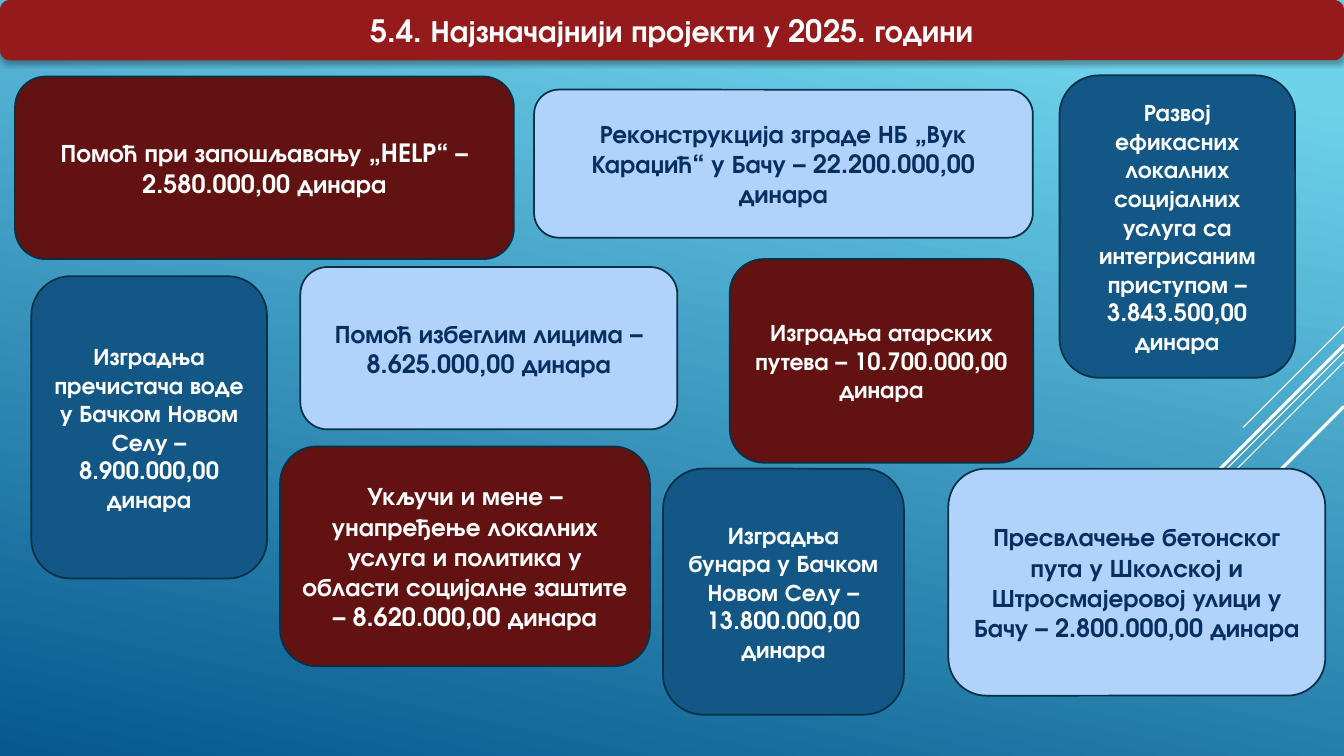
from dataclasses import dataclass

from lxml import etree
from pptx import Presentation
from pptx.dml.color import RGBColor
from pptx.enum.shapes import MSO_CONNECTOR as Connector, MSO_SHAPE as Shape
from pptx.enum.text import MSO_ANCHOR as Anchor, PP_ALIGN as Align
from pptx.oxml import parse_xml
from pptx.oxml.ns import nsdecls, qn
from pptx.util import Cm, Pt

WIDTH, HEIGHT = 33.87, 19.05


@dataclass(frozen=True)
class CardStyle:
    fill: str
    text: str
    size: int


@dataclass(frozen=True)
class Theme:
    font: str = "TeX Gyre Adventor"
    sky: str = "6ED2EB"
    sea: str = "06588E"
    white: str = "FFFFFF"
    banner: str = "941A1B"
    outline: str = "043148"
    title_size: int = 22
    outline_width: float = 1.25
    red: CardStyle = CardStyle("631212", "FFFFFF", 18)
    red_small: CardStyle = CardStyle("631212", "FFFFFF", 17)
    light: CardStyle = CardStyle("B1D3FB", "052F61", 18)
    blue: CardStyle = CardStyle("125785", "FFFFFF", 17)


THEME = Theme()

# Diagonal rays: height at the right edge, horizontal reach, line width
RAYS = [
    (8.23, 2.54, 0.75),
    (8.86, 8.28, 0.75),
    (9.12, 5.26, 0.75),
    (8.69, 4.85, 2.25),
    (10.24, 3.53, 2.25),
]

# Projects: box (left, top, width, height), style, text
PROJECTS = [
    ((0.38, 1.93, 12.57, 4.6), THEME.red,
     "Помоћ при запошљавању „HELP“ – 2.580.000,00 динара"),
    ((13.46, 2.26, 12.57, 3.73), THEME.light,
     "Реконструкција зграде НБ „Вук Караџић“ у Бачу – 22.200.000,00 динара"),
    ((18.39, 6.53, 7.65, 5.13), THEME.red_small,
     "Изградња атарских путева – 10.700.000,00 динара"),
    ((7.57, 6.73, 9.5, 4.09), THEME.light,
     "Помоћ избеглим лицима – 8.625.000,00 динара"),
    ((0.79, 6.96, 5.94, 7.62), THEME.blue,
     "Изградња пречистача воде у Бачком Новом Селу – 8.900.000,00 динара"),
    ((26.7, 1.9, 5.94, 7.62), THEME.blue,
     "Развој ефикасних локалних социјалних услуга са интегрисаним "
     "приступом – 3.843.500,00 динара"),
    ((7.06, 11.25, 9.32, 5.54), THEME.red,
     "Укључи и мене – унапређење локалних услуга и политика у области "
     "социјалне заштите – 8.620.000,00 динара"),
    ((23.9, 11.81, 9.5, 5.72), THEME.light,
     "Пресвлачење бетонског пута у Школској и Штросмајеровој улици "
     "у Бачу – 2.800.000,00 динара"),
    ((16.71, 11.81, 6.07, 6.2), THEME.blue,
     "Изградња бунара у Бачком Новом Селу – 13.800.000,00 динара"),
]


def color(value):
    return RGBColor.from_string(value)


def paint_background(slide):
    fill = slide.background.fill
    fill.gradient()
    fill.gradient_angle = 258
    stops = [(0.1, THEME.sky), (1.0, THEME.sea)]
    for stop, (position, value) in zip(fill.gradient_stops, stops):
        stop.position = position
        stop.color.rgb = color(value)


def add_rays(slide, right):
    """Draw 45-degree rays running down and left from the right edge."""
    for top, reach, width in RAYS:
        ray = slide.shapes.add_connector(
            Connector.STRAIGHT,
            Cm(right), Cm(top), Cm(right - reach), Cm(top + reach))
        ray.line.color.rgb = color(THEME.white)
        ray.line.width = Pt(width)
        etree.SubElement(ray._element.spPr, qn("a:effectLst"))


def add_card(slide, box, style, text):
    """Place a filled rounded rectangle with centred bold text."""
    shape = slide.shapes.add_shape(
        Shape.ROUNDED_RECTANGLE, *(Cm(length) for length in box))
    shape.shadow.inherit = False
    shape.fill.solid()
    shape.fill.fore_color.rgb = color(style.fill)
    shape.line.color.rgb = color(THEME.outline)
    shape.line.width = Pt(THEME.outline_width)

    frame = shape.text_frame
    frame.word_wrap = True
    frame.vertical_anchor = Anchor.MIDDLE
    paragraph = frame.paragraphs[0]
    paragraph.alignment = Align.CENTER
    run = paragraph.add_run()
    run.text = text
    run.font.name = THEME.font
    run.font.size = Pt(style.size)
    run.font.bold = True
    run.font.color.rgb = color(style.text)
    return shape


def add_banner(slide, box, text):
    """Place the title bar: a card without outline, with a soft shadow."""
    style = CardStyle(THEME.banner, THEME.white, THEME.title_size)
    banner = add_card(slide, box, style, text)
    banner.line.fill.background()
    effects = banner._element.spPr.find(qn("a:effectLst"))
    effects.append(parse_xml(
        f'<a:outerShdw {nsdecls("a")} blurRad="{Pt(3.5)}" dist="{Pt(2.2)}" '
        'dir="5400000" algn="ctr" rotWithShape="0">'
        '<a:srgbClr val="000000"><a:alpha val="32000"/></a:srgbClr>'
        '</a:outerShdw>'))


def main():
    presentation = Presentation()
    presentation.slide_width = Cm(WIDTH)
    presentation.slide_height = Cm(HEIGHT)
    slide = presentation.slides.add_slide(presentation.slide_layouts[6])

    # Backdrop
    paint_background(slide)
    add_rays(slide, WIDTH)

    # Title and projects
    add_banner(slide, (0, 0, WIDTH, 1.52),
               "5.4. Најзначајнији пројекти у 2025. години")
    for box, style, text in PROJECTS:
        add_card(slide, box, style, text)

    presentation.save("out.pptx")


if __name__ == "__main__":
    main()
